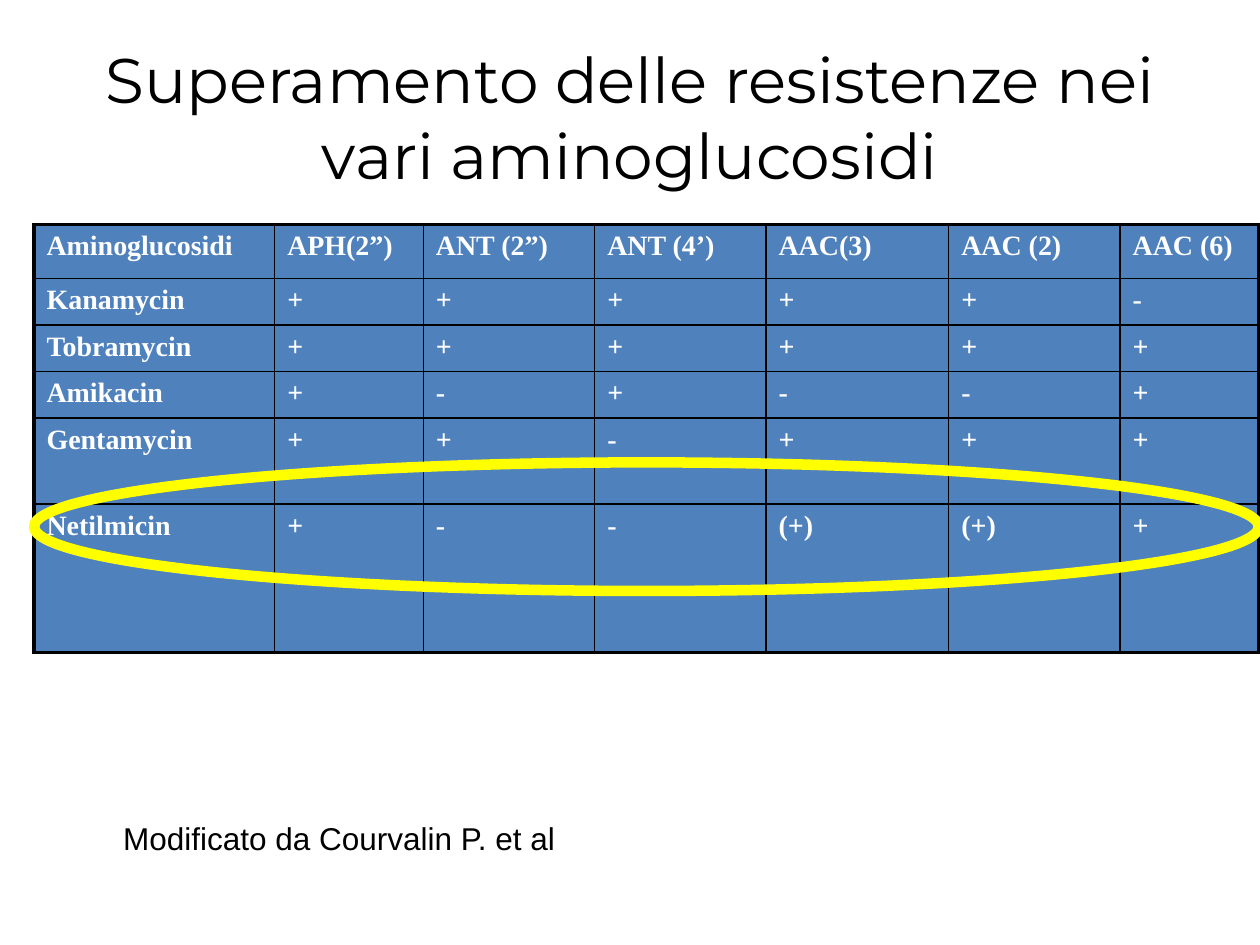
"""Build a slide comparing how aminoglycosides overcome resistance enzymes."""
from lxml import etree
from pptx import Presentation
from pptx.dml.color import RGBColor
from pptx.enum.shapes import MSO_SHAPE
from pptx.enum.text import MSO_ANCHOR, MSO_AUTO_SIZE, PP_ALIGN
from pptx.oxml.ns import qn
from pptx.util import Inches, Pt

OVAL = MSO_SHAPE.OVAL
MIDDLE = MSO_ANCHOR.MIDDLE
CENTER = PP_ALIGN.CENTER
GROW = MSO_AUTO_SIZE.SHAPE_TO_FIT_TEXT
TITLE_ONLY = 5

COLORS = {"text": "000000", "cell_text": "FFFFFF", "cell": "4F81BD",
          "border": "000000", "highlight": "FFFF00"}
TITLE_FONT = {"name": "Montserrat", "size": Pt(36), "bold": False}
CELL_FONT = {"name": "Times New Roman", "size": Pt(16), "bold": True}
CREDIT_FONT = {"name": "Arial", "size": Pt(18), "bold": False}

TABLE_LEFT, TABLE_TOP = 0.27, 1.78
COLUMN_WIDTHS = [1.91, 1.18, 1.36, 1.36, 1.45, 1.36, 1.1]
ROW_HEIGHTS = [0.43, 0.37, 0.37, 0.37, 0.68, 1.18]
INNER_BORDER, OUTER_BORDER = 1, 2.25
RESISTANCES = [
    ["Aminoglucosidi", "APH(2”)", "ANT (2”)", "ANT (4’)", "AAC(3)", "AAC (2)", "AAC (6)"],
    ["Kanamycin", "+", "+", "+", "+", "+", "-"],
    ["Tobramycin", "+", "+", "+", "+", "+", "+"],
    ["Amikacin", "+", "-", "+", "-", "-", "+"],
    ["Gentamycin", "+", "+", "-", "+", "+", "+"],
    ["Netilmicin", "+", "-", "-", "(+)", "(+)", "+"],
]


def color(role):
    """Return the colour for a role on the slide."""
    return RGBColor.from_string(COLORS[role])


def write(frame, text, font_format, role):
    """Write one formatted paragraph and return it."""
    paragraph = frame.paragraphs[0]
    run = paragraph.add_run()
    run.text = text
    for attribute, value in font_format.items():
        setattr(run.font, attribute, value)
    run.font.color.rgb = color(role)
    return paragraph


def add_title(slide, text):
    """Place and fill the title placeholder."""
    title = slide.shapes.title
    box = {"left": 0.5, "top": 0.3, "width": 9, "height": 1.25}
    for attribute, value in box.items():
        setattr(title, attribute, Inches(value))
    title.text_frame.vertical_anchor = MIDDLE
    write(title.text_frame, text, TITLE_FONT, "text").alignment = CENTER


def set_borders(cell, widths):
    """Draw the cell's borders with a width in points for each side."""
    properties = cell._tc.get_or_add_tcPr()
    for side, width in widths.items():
        line = etree.SubElement(properties, qn(f"a:ln{side}"), w=str(Pt(width)))
        fill = etree.SubElement(line, qn("a:solidFill"))
        etree.SubElement(fill, qn("a:srgbClr"), val=COLORS["border"])


def set_relative_space_before(paragraph, percent):
    """Set the space before a paragraph as a share of its line."""
    spacing = etree.SubElement(paragraph._p.get_or_add_pPr(), qn("a:spcBef"))
    etree.SubElement(spacing, qn("a:spcPct"), val=str(percent * 1000))


def add_resistance_table(slide):
    """Add the table with a heavier border round its outside."""
    row_count, column_count = len(ROW_HEIGHTS), len(COLUMN_WIDTHS)
    table = slide.shapes.add_table(
        row_count, column_count, Inches(TABLE_LEFT), Inches(TABLE_TOP),
        Inches(sum(COLUMN_WIDTHS)), Inches(sum(ROW_HEIGHTS))).table
    for column, width in zip(table.columns, COLUMN_WIDTHS):
        column.width = Inches(width)
    for row, height in zip(table.rows, ROW_HEIGHTS):
        row.height = Inches(height)
    for r, entries in enumerate(RESISTANCES):
        for c, entry in enumerate(entries):
            cell = table.cell(r, c)
            on_edge = {"L": c == 0, "R": c == column_count - 1,
                       "T": r == 0, "B": r == row_count - 1}
            set_borders(cell, {side: OUTER_BORDER if outer else INNER_BORDER
                               for side, outer in on_edge.items()})
            cell.fill.solid()
            cell.fill.fore_color.rgb = color("cell")
            paragraph = write(cell.text_frame, entry, CELL_FONT, "cell_text")
            set_relative_space_before(paragraph, 20)


def add_credit(slide, text):
    """Add the source credit below the table."""
    credit = slide.shapes.add_textbox(Inches(0.88), Inches(6.45), Inches(3.66), Inches(0.4))
    credit.text_frame.word_wrap = False
    credit.text_frame.auto_size = GROW
    write(credit.text_frame, text, CREDIT_FONT, "text")


def add_highlight(slide):
    """Ring the last row of the table."""
    ring = slide.shapes.add_shape(OVAL, Inches(TABLE_LEFT), Inches(3.67),
                                  Inches(sum(COLUMN_WIDTHS)), Inches(1.02))
    ring.shadow.inherit = False
    ring.fill.background()
    ring.line.color.rgb = color("highlight")
    ring.line.width = Pt(6)


def main():
    """Build and save the slide."""
    presentation = Presentation()
    presentation.slide_width, presentation.slide_height = Inches(10), Inches(7.5)
    slide = presentation.slides.add_slide(presentation.slide_layouts[TITLE_ONLY])
    add_title(slide, "Superamento delle resistenze nei vari aminoglucosidi")
    add_resistance_table(slide)
    add_credit(slide, "Modificato da Courvalin P. et al")
    add_highlight(slide)
    presentation.save("out.pptx")


if __name__ == "__main__":
    main()
